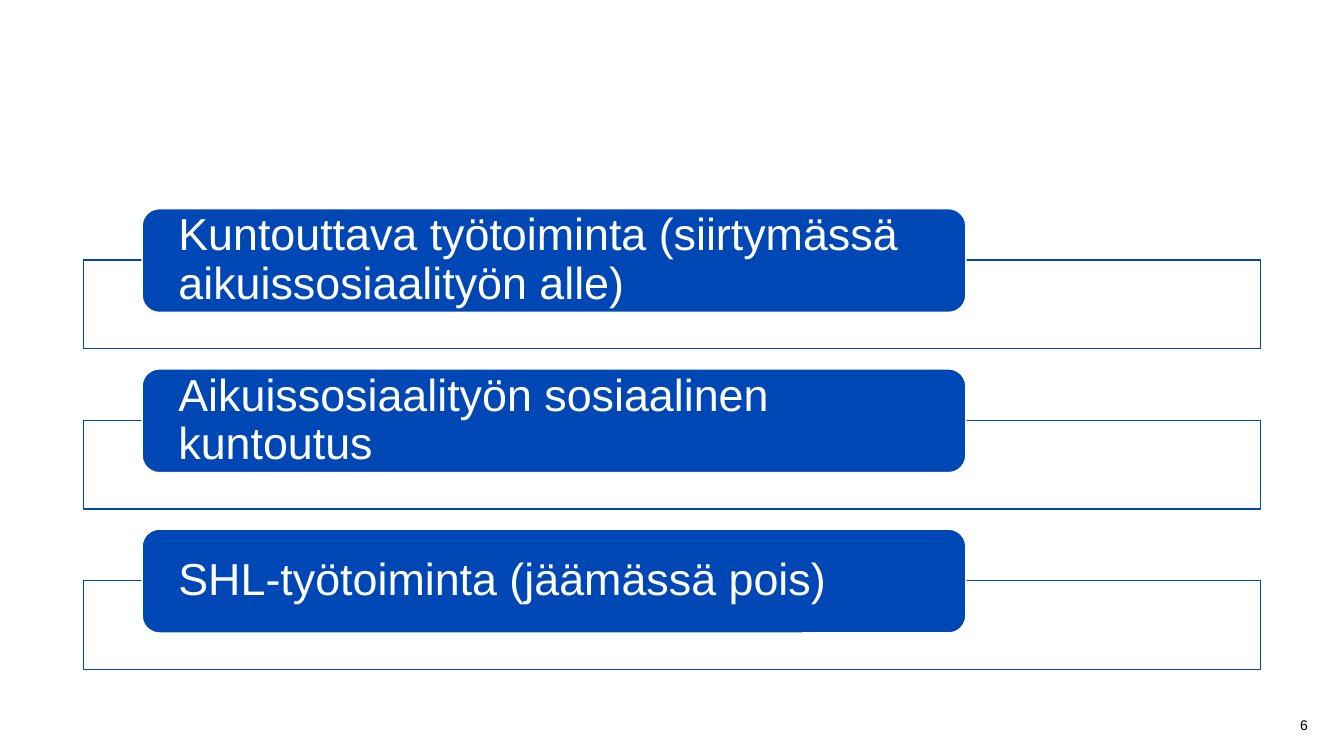
from pptx import Presentation
from pptx.dml.color import RGBColor
from pptx.enum.shapes import MSO_SHAPE as SHAPE
from pptx.enum.text import MSO_ANCHOR, PP_ALIGN
from pptx.util import Inches, Pt

SERVICES = [
    "Kuntouttava työtoiminta (siirtymässä aikuissosiaalityön alle)",
    "Aikuissosiaalityön sosiaalinen kuntoutus",
    "SHL-työtoiminta (jäämässä pois)",
]
PAGE_NUMBER = "6"

BLUE = RGBColor(0x00, 0x47, 0xB6)
WHITE = RGBColor(0xFF, 0xFF, 0xFF)
BLACK = RGBColor(0x00, 0x00, 0x00)

FIRST_TOP, PITCH = 2.07, 1.59
FRAME_DROP = 0.51


def add_box(s, kind, left, top, width, height, fill, line):
    sp = s.shapes.add_shape(kind, Inches(left), Inches(top), Inches(width), Inches(height))
    sp.shadow.inherit = False
    sp.fill.solid()
    sp.fill.fore_color.rgb = fill
    sp.line.color.rgb = line
    sp.line.width = Pt(1)
    return sp


def write(sp, text, size, color, align=PP_ALIGN.LEFT, inset=0, spacing=1.0):
    tf = sp.text_frame
    tf.word_wrap = True
    tf.vertical_anchor = MSO_ANCHOR.MIDDLE
    tf.margin_left = tf.margin_right = Inches(inset)
    tf.margin_top = tf.margin_bottom = 0
    p = tf.paragraphs[0]
    p.alignment = align
    p.line_spacing = spacing
    r = p.add_run()
    r.text = text
    r.font.name = "Arial"
    r.font.size = Pt(size)
    r.font.color.rgb = color


def main():
    prs = Presentation()
    prs.slide_width, prs.slide_height = Inches(13.33), Inches(7.5)
    s = prs.slides.add_slide(prs.slide_layouts[6])

    for i, service in enumerate(SERVICES):
        top = FIRST_TOP + i * PITCH
        add_box(s, SHAPE.RECTANGLE, 0.83, top + FRAME_DROP, 11.67, 0.88, WHITE, BLUE)
        label = add_box(s, SHAPE.ROUNDED_RECTANGLE, 1.41, top, 8.17, 1.03, BLUE, WHITE)
        write(label, service, 32, WHITE, inset=0.31, spacing=0.9)

    number = s.shapes.add_textbox(Inches(12.02), Inches(7.03), Inches(0.95), Inches(0.32))
    write(number, PAGE_NUMBER, 10, BLACK, align=PP_ALIGN.RIGHT)

    prs.save("out.pptx")


if __name__ == "__main__":
    main()
